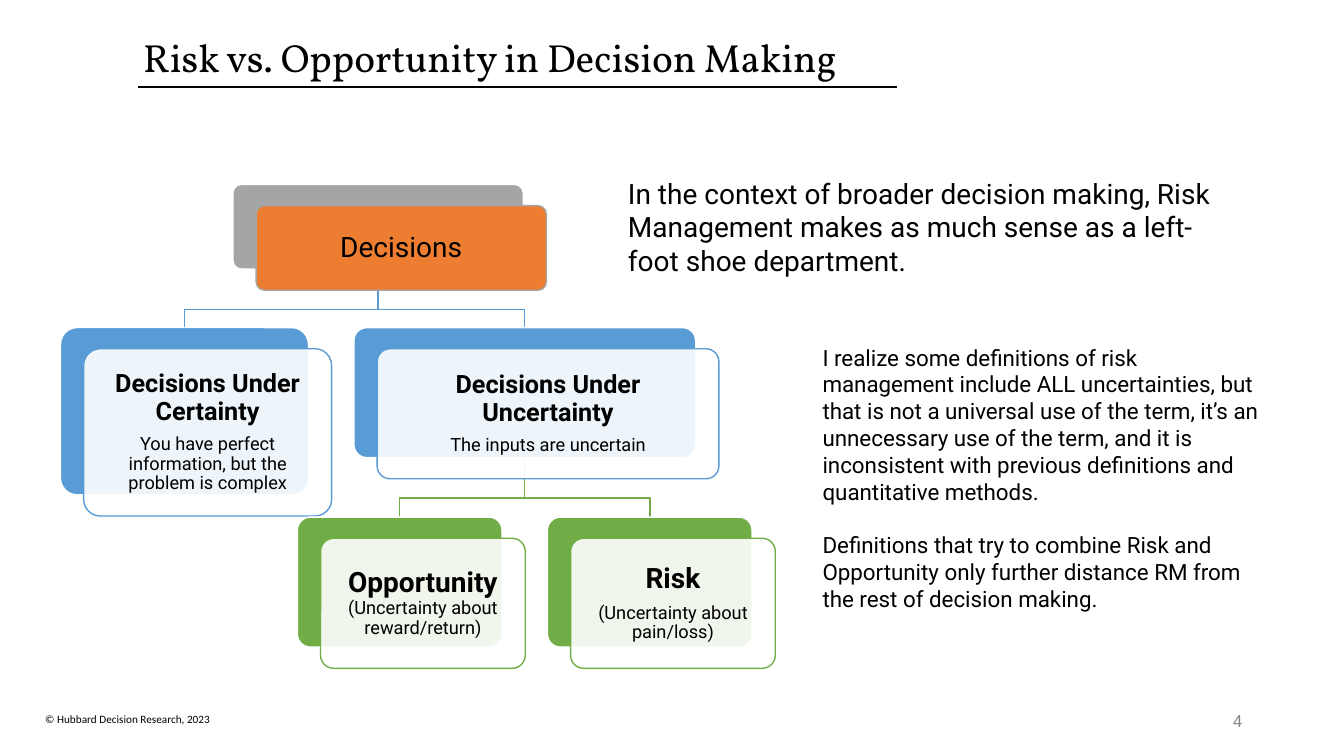
from lxml import etree
from pptx import Presentation
from pptx.dml.color import RGBColor
from pptx.enum.shapes import MSO_CONNECTOR, MSO_SHAPE
from pptx.enum.text import MSO_ANCHOR, PP_ALIGN
from pptx.oxml.ns import qn
from pptx.util import Inches, Pt

LINE = MSO_CONNECTOR.STRAIGHT
ROUNDED = MSO_SHAPE.ROUNDED_RECTANGLE
TOP, MIDDLE = MSO_ANCHOR.TOP, MSO_ANCHOR.MIDDLE
LEFT, CENTER, RIGHT = PP_ALIGN.LEFT, PP_ALIGN.CENTER, PP_ALIGN.RIGHT

COLORS = {"black": "000000", "white": "FFFFFF", "gray": "A5A5A5",
          "orange": "ED7D31", "blue": "599BD5", "green": "70AD47",
          "number": "888888"}
BODY, TITLE, FOOTER = "Roboto", "Vollkorn", "Calibri"
CARD_OFFSET = 0.23, 0.21    # front card relative to back card
ELBOW_DROP = 0.4            # parent card bottom to the crossbar

# Tree nodes: back card box, paragraphs of (text, size, bold) runs
NODES = {
    "decisions": ((2.31, 1.83, 2.88, 0.84), [[("Decisions", 20, False)]]),
    "certainty": ((0.6, 3.25, 2.46, 1.66), [
        [("Decisions Under Certainty", 18, True)],
        [("You have perfect information, but the problem is complex", 13, False)]]),
    "uncertainty": ((3.51, 3.25, 3.39, 1.29), [
        [("Decisions Under Uncertainty", 18, True)],
        [("The inputs are uncertain", 13, False)]]),
    "opportunity": ((2.95, 5.13, 2.03, 1.29), [
        [("Opportunity", 20, True),
         (" (Uncertainty about reward/return)", 13, False)]]),
    "risk": ((5.43, 5.13, 2.03, 1.29), [
        [("Risk", 20, True)],
        [("(Uncertainty about pain/loss)", 13, False)]]),
}
# Back fill, front fill, front outline, front opacity in percent
STYLES = {
    "decisions": ("gray", "orange", "gray", 100),
    "certainty": ("blue", "white", "blue", 90),
    "uncertainty": ("blue", "white", "blue", 90),
    "opportunity": ("green", "white", "green", 90),
    "risk": ("green", "white", "green", 90),
}
LINKS = [("uncertainty", "risk"), ("uncertainty", "opportunity"),
         ("decisions", "uncertainty"), ("decisions", "certainty")]


def rgb(name):
    return RGBColor.from_string(COLORS[name])


def fill_text(tf, paragraphs, font=BODY, color="black", align=LEFT,
              anchor=TOP, insets=(0.1, 0.05), spacing=None, gap=0):
    tf.word_wrap = True
    tf.vertical_anchor = anchor
    tf.margin_left = tf.margin_right = Inches(insets[0])
    tf.margin_top = tf.margin_bottom = Inches(insets[1])
    for i, runs in enumerate(paragraphs):
        p = tf.add_paragraph() if i else tf.paragraphs[0]
        p.alignment = align
        if spacing:
            p.line_spacing = spacing
        if i:
            p.space_before = Pt(gap)
        for text, size, bold in runs:
            r = p.add_run()
            r.text = text
            r.font.name, r.font.size, r.font.bold = font, Pt(size), bold
            r.font.color.rgb = rgb(color)


def add_text(slide, box, paragraphs, **style):
    sp = slide.shapes.add_textbox(*map(Inches, box))
    fill_text(sp.text_frame, paragraphs, **style)


def add_card(slide, box, fill, line, opacity=100):
    sp = slide.shapes.add_shape(ROUNDED, *map(Inches, box))
    sp.adjustments[0] = 0.1
    sp.shadow.inherit = False
    sp.fill.solid()
    sp.fill.fore_color.rgb = rgb(fill)
    sp.line.color.rgb = rgb(line)
    sp.line.width = Pt(1)
    if opacity < 100:
        clr = sp._element.spPr.find(qn("a:solidFill"))[0]
        etree.SubElement(clr, qn("a:alpha")).set("val", str(opacity * 1000))
    return sp


def add_node(slide, box, paragraphs, style):
    back, front, outline, opacity = style
    x, y, w, h = box
    dx, dy = CARD_OFFSET
    add_card(slide, box, back, "white")
    sp = add_card(slide, (x + dx, y + dy, w, h), front, outline, opacity)
    fill_text(sp.text_frame, paragraphs, align=CENTER, anchor=MIDDLE,
              insets=(0.08, 0.08), spacing=0.9, gap=6.5)


def add_elbow(slide, parent, child, color):
    px, py, pw, ph = parent
    cx, cy, cw, _ = child
    start, end = Inches(px + pw / 2), Inches(cx + cw / 2)
    bottom, bar = Inches(py + ph), Inches(py + ph + ELBOW_DROP)
    points = [(start, bar), (end, bar), (end, Inches(cy))]
    builder = slide.shapes.build_freeform(start, bottom)
    builder.add_line_segments(points, close=False)
    sp = builder.convert_to_shape()
    sp.shadow.inherit = False
    sp.fill.background()
    sp.line.color.rgb = rgb(color)
    sp.line.width = Pt(1)


def add_header(slide, box):
    x, y, w, h = box
    add_text(slide, box, [[("Risk vs. Opportunity in Decision Making", 28, False)]],
             font=TITLE, anchor=MIDDLE, spacing=0.9)
    rule_y = Inches(y + h + 0.01)
    rule = slide.shapes.add_connector(LINE, Inches(x + 0.05), rule_y,
                                      Inches(x + 7.58), rule_y)
    rule.line.color.rgb = rgb("black")
    rule.line.width = Pt(1.5)
    etree.SubElement(rule._element.spPr, qn("a:effectLst"))


def add_tree(slide):
    for parent, child in LINKS:
        add_elbow(slide, NODES[parent][0], NODES[child][0], STYLES[child][0])
    for name, (box, paragraphs) in NODES.items():
        add_node(slide, box, paragraphs, STYLES[name])


def add_commentary(slide, box):
    x, y, w, h = box
    add_text(slide, (x, y, 5.99, 1.11), [[(
        "In the context of broader decision making, Risk Management makes "
        "as much sense as a left-foot shoe department.", 20, False)]])
    add_text(slide, (x + 1.93, y + 1.66, w - 1.93, h - 1.66), [
        [("I realize some definitions of risk management include ALL "
          "uncertainties, but that is not a universal use of the term, it’s an "
          "unnecessary use of the term, and it is inconsistent with previous "
          "definitions and quantitative methods.", 16, False)],
        [("Definitions that try to combine Risk and Opportunity only further "
          "distance RM from the rest of decision making.", 16, False)]], gap=19)


def add_footer(slide, box):
    x, y, w, h = box
    add_text(slide, (x, y + 0.07, 2.5, 0.24),
             [[("© Hubbard Decision Research, 2023", 8, False)]], font=FOOTER)
    add_text(slide, (x + w - 3, y, 3, h), [[("4", 12, False)]],
             color="number", align=RIGHT, anchor=MIDDLE)


def main():
    prs = Presentation()
    prs.slide_width, prs.slide_height = Inches(13.33), Inches(7.5)
    slide = prs.slides.add_slide(prs.slide_layouts[6])
    add_header(slide, (1.32, 0.34, 8.15, 0.51))
    add_tree(slide)
    add_commentary(slide, (6.13, 1.7, 6.46, 4.45))
    add_footer(slide, (0.35, 6.95, 12.07, 0.4))
    prs.save("out.pptx")


if __name__ == "__main__":
    main()
